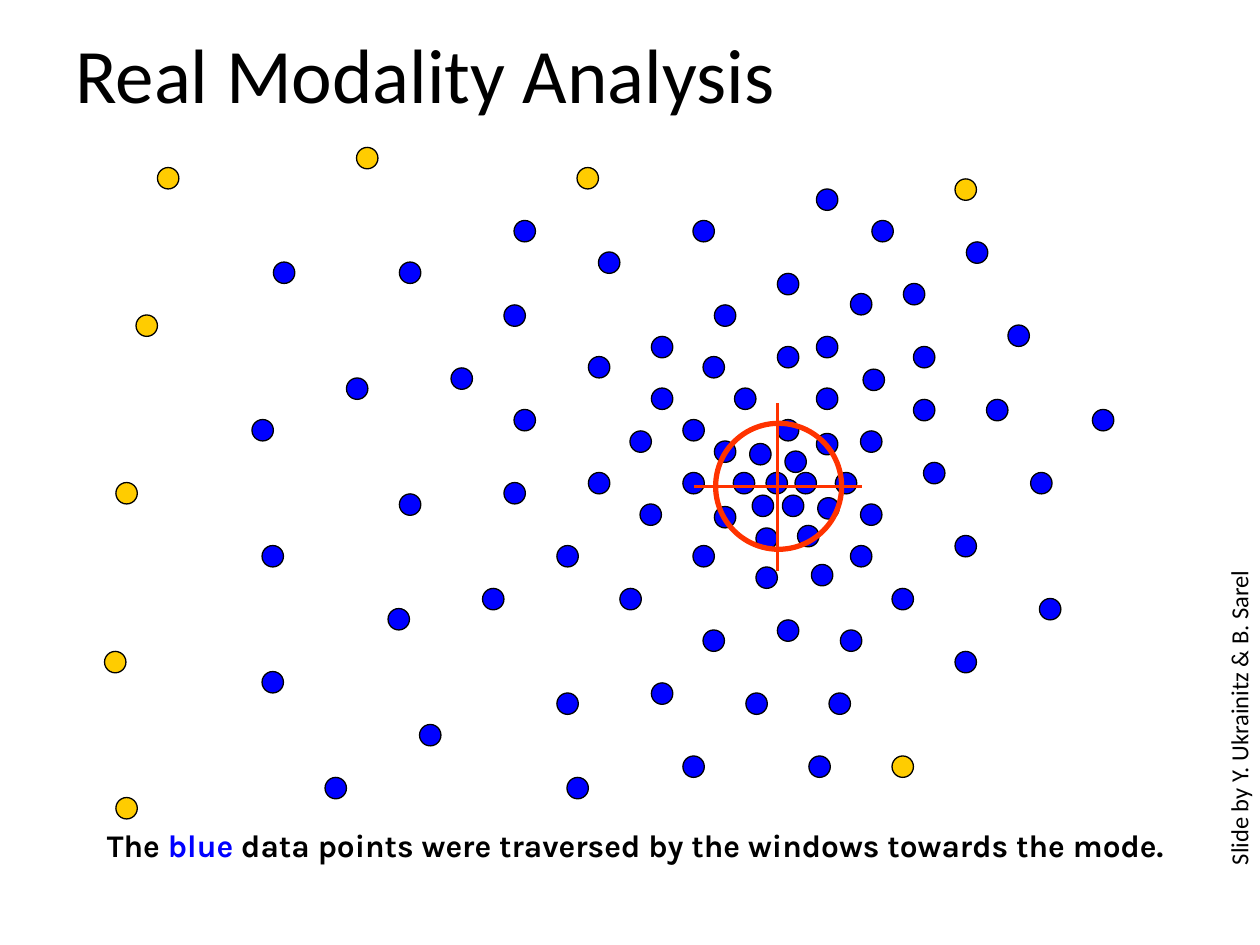
import pptx
import pptx.util
from lxml import etree
from pptx.dml.color import RGBColor
from pptx.enum.shapes import MSO_CONNECTOR, MSO_SHAPE
from pptx.enum.text import MSO_ANCHOR, MSO_AUTO_SIZE
from pptx.oxml.ns import qn
from pptx.util import Inches

BLACK = RGBColor(0x00, 0x00, 0x00)
BLUE = RGBColor(0x00, 0x00, 0xFF)
GOLD = RGBColor(0xFF, 0xCC, 0x00)
RED = RGBColor(0xFF, 0x33, 0x00)

POINT_SIZE = 0.17
WINDOW_LEFT, WINDOW_TOP, WINDOW_SIZE = 5.68, 3.36, 1

# Left and top of every data point, in inches
TRAVERSED_POINTS = [
    (6.08, 3.75), (6.31, 3.75), (6.23, 3.58), (5.95, 3.52), (6.21, 3.93),
    (5.97, 3.93), (6.49, 3.95), (5.82, 3.75), (6.63, 3.75), (6.48, 3.44),
    (6.17, 3.33), (6.33, 4.17), (6, 4.19), (5.67, 4.02), (5.42, 3.75),
    (5.67, 3.5), (6.83, 4), (6.75, 4.33), (6.44, 4.48), (6, 4.5),
    (5.5, 4.33), (5.08, 4), (5, 3.42), (5.42, 3.33), (5.83, 3.08),
    (6.48, 3.08), (6.17, 2.75), (5.17, 3.08), (5.58, 2.83), (6.17, 2.17),
    (5.67, 2.42), (6.48, 2.67), (6.48, 1.5), (6.75, 2.33), (6.85, 2.93),
    (6.83, 3.42), (7.25, 3.17), (7.25, 2.75), (7.17, 2.25), (6.92, 1.75),
    (7.67, 1.92), (8, 2.58), (7.33, 3.67), (7.83, 3.17), (8.67, 3.25),
    (7.58, 4.25), (8.18, 3.75), (7.08, 4.67), (8.25, 4.75), (7.58, 5.17),
    (6.67, 5), (6.17, 4.92), (6.58, 5.5), (6.42, 6), (5.92, 5.5),
    (5.58, 5), (4.92, 4.67), (5.17, 5.42), (5.42, 6), (4.5, 6.17),
    (4.42, 5.5), (3.83, 4.67), (4.42, 4.33), (4.67, 3.75), (4.08, 3.25),
    (4.67, 2.83), (5.17, 2.67), (4.75, 2), (5.5, 1.75), (4.08, 1.75),
    (4, 2.42), (3.58, 2.92), (4, 3.83), (3.17, 3.92), (3.08, 4.83),
    (3.33, 5.75), (2.58, 6.17), (2.08, 5.33), (2.08, 4.33), (2.75, 3),
    (3.17, 2.08), (2.17, 2.08), (2, 3.33),
]
UNTOUCHED_POINTS = [
    (7.58, 1.42), (7.08, 6), (4.58, 1.33), (0.83, 5.17), (0.92, 6.33),
    (0.92, 3.83), (1.08, 2.5), (1.25, 1.33), (2.83, 1.17),
]


def add_circle(slide, left, top, size, line_color, line_width, fill_color=None):
    circle = slide.shapes.add_shape(
        MSO_SHAPE.OVAL, Inches(left), Inches(top), Inches(size), Inches(size))
    circle.shadow.inherit = False
    if fill_color is None:
        circle.fill.background()
    else:
        circle.fill.solid()
        circle.fill.fore_color.rgb = fill_color
    circle.line.color.rgb = line_color
    circle.line.width = pptx.util.Pt(line_width)


def add_line(slide, start, end, color, width):
    line = slide.shapes.add_connector(
        MSO_CONNECTOR.STRAIGHT, *(Inches(value) for value in (*start, *end)))
    line.line.color.rgb = color
    line.line.width = pptx.util.Pt(width)
    etree.SubElement(line._element.spPr, qn("a:effectLst"))


def add_text(slide, box, runs, *, size, font="Calibri", bold=False, rotation=0,
             wrap=False, anchor=MSO_ANCHOR.TOP, line_spacing=None):
    """Add one paragraph made of (text, color) runs."""
    text_box = slide.shapes.add_textbox(*(Inches(value) for value in box))
    text_box.rotation = rotation
    frame = text_box.text_frame
    frame.word_wrap = wrap
    frame.auto_size = MSO_AUTO_SIZE.NONE if wrap else MSO_AUTO_SIZE.SHAPE_TO_FIT_TEXT
    frame.vertical_anchor = anchor
    paragraph = frame.paragraphs[0]
    paragraph.line_spacing = line_spacing
    for text, color in runs:
        run = paragraph.add_run()
        run.text = text
        run.font.name = font
        run.font.size = pptx.util.Pt(size)
        run.font.bold = bold
        run.font.color.rgb = color


def add_target_window(slide):
    add_circle(slide, WINDOW_LEFT, WINDOW_TOP, WINDOW_SIZE, RED, 3)
    add_line(slide, (6.17, 3.2), (6.17, 4.53), RED, 1.5)
    add_line(slide, (5.51, 3.86), (6.84, 3.86), RED, 1.5)


def main():
    deck = pptx.Presentation()
    deck.slide_width, deck.slide_height = Inches(10), Inches(7.5)
    slide = deck.slides.add_slide(deck.slide_layouts[6])

    for points, color in ((TRAVERSED_POINTS, BLUE), (UNTOUCHED_POINTS, GOLD)):
        for left, top in points:
            add_circle(slide, left, top, POINT_SIZE, BLACK, 0.75, color)
    add_target_window(slide)

    caption = [
        ("The ", BLACK),
        ("blue ", BLUE),
        ("data points were traversed by the windows towards the mode.", BLACK),
    ]
    add_text(slide, (0.75, 6.51, 8.73, 0.4), caption, size=18, font="Karla", bold=True)
    add_text(slide, (8.33, 5.29, 3.01, 0.34),
             [("Slide by Y. Ukrainitz & B. Sarel", BLACK)], size=14, rotation=270)
    add_text(slide, (0.5, 0, 9, 1.25), [("Real Modality Analysis", BLACK)],
             size=44, wrap=True, anchor=MSO_ANCHOR.MIDDLE, line_spacing=0.9)

    deck.save("out.pptx")


if __name__ == "__main__":
    main()
